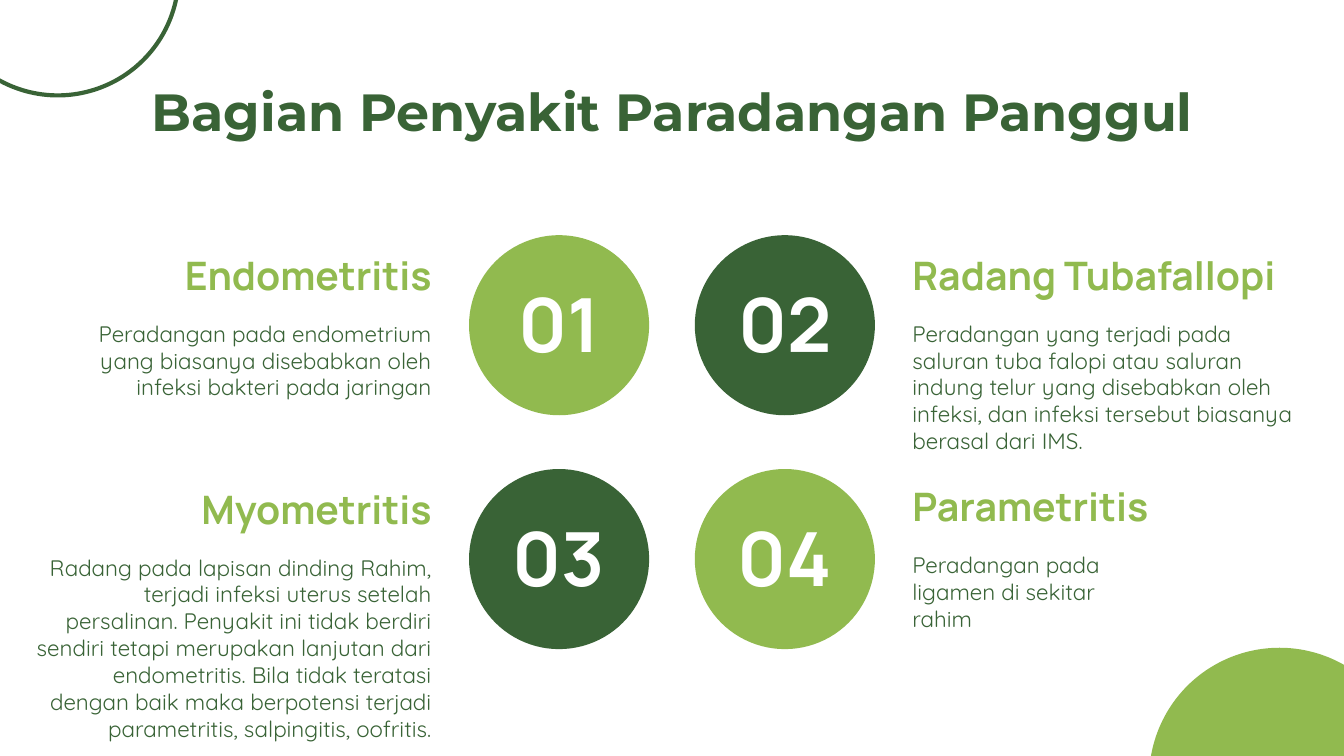
from pptx import Presentation
from pptx.util import Inches, Pt
from pptx.dml.color import RGBColor
from pptx.enum.shapes import MSO_SHAPE as Shape
from pptx.enum.text import PP_ALIGN as Align, MSO_ANCHOR as Anchor

DARK = RGBColor(0x39, 0x63, 0x36)
LIME = RGBColor(0x91, 0xBA, 0x4F)
WHITE = RGBColor(0xFF, 0xFF, 0xFF)

TITLE = "Bagian Penyakit Paradangan Panggul"
PARTS = [
    ("01", "Endometritis", "Peradangan pada endometrium yang biasanya disebabkan "
     "oleh infeksi bakteri pada jaringan", LIME, 2.54, 3.11, 0.02),
    ("02", "Radang Tubafallopi", "Peradangan yang terjadi pada saluran tuba falopi "
     "atau saluran indung telur yang disebabkan oleh infeksi, dan infeksi tersebut "
     "biasanya berasal dari IMS.", DARK, 3.22, 3.11, 0.02),
    ("03", "Myometritis", "Radang pada lapisan dinding Rahim, terjadi infeksi uterus "
     "setelah persalinan. Penyakit ini tidak berdiri sendiri tetapi merupakan "
     "lanjutan dari endometritis. Bila tidak teratasi dengan baik maka berpotensi "
     "terjadi parametritis, salpingitis, oofritis.", DARK, 2.69, 3.19, 0.02),
    ("04", "Parametritis", "Peradangan pada ligamen di sekitar rahim",
     LIME, 2.54, 1.94, 0),
]

WIDE = 10
HIGH = WIDE * 9 / 16
DISC = 1.34
LEFT, TOP = 3.49, 1.75
STEP_X, STEP_Y = 1.68, 1.74
GAP = 0.18
NUM_W, NUM_H = 1.28, 0.78
HEAD_H, BODY_H = 0.63, 0.78
BODY_DROP = 0.51

deck = Presentation()
deck.slide_width, deck.slide_height = Inches(WIDE), Inches(HIGH)
slide = deck.slides.add_slide(deck.slide_layouts[6])


def add_disc(x, y, size, fill=None, line=None):
    disc = slide.shapes.add_shape(Shape.OVAL, *map(Inches, (x, y, size, size)))
    disc.shadow.inherit = False
    if fill is None:
        disc.fill.background()
    else:
        disc.fill.solid()
        disc.fill.fore_color.rgb = fill
    if line is None:
        disc.line.fill.background()
    else:
        disc.line.color.rgb = line
        disc.line.width = Pt(2.25)


def add_text(text, x, y, w, h, font, size, color, align, bold=True, anchor=Anchor.TOP):
    frame = slide.shapes.add_textbox(*map(Inches, (x, y, w, h))).text_frame
    frame.word_wrap = True
    frame.vertical_anchor = anchor
    frame.margin_left = frame.margin_right = Inches(0.1)
    frame.margin_top = frame.margin_bottom = Inches(0.1)
    frame.text = text
    para = frame.paragraphs[0]
    para.alignment = align
    face = para.runs[0].font
    face.name, face.size, face.bold = font, Pt(size), bold
    face.color.rgb = color


add_disc(-0.47, -1.09, 1.8, line=DARK)
add_disc(8.55, 4.82, 1.94, fill=LIME)
add_text(TITLE, 0.34, 0.49, WIDE - 2 * 0.34, HEAD_H, "Montserrat", 28, DARK, Align.CENTER)

for i, (num, head, body, fill, head_w, body_w, drop) in enumerate(PARTS):
    row, col = divmod(i, 2)
    x, y = LEFT + col * STEP_X, TOP + row * STEP_Y
    add_disc(x, y, DISC, fill=fill)
    add_text(num, x + (DISC - NUM_W) / 2, y + 0.26, NUM_W, NUM_H,
             "Manrope", 40, WHITE, Align.CENTER, anchor=Anchor.MIDDLE)
    align = Align.LEFT if col else Align.RIGHT
    head_x, body_x = (x + DISC + GAP if col else x - GAP - w for w in (head_w, body_w))
    add_text(head, head_x, y + drop, head_w, HEAD_H, "Manrope", 21, LIME, align)
    add_text(body, body_x, y + drop + BODY_DROP, body_w, BODY_H,
             "Quicksand", 12, DARK, align, bold=False)

deck.save("out.pptx")
